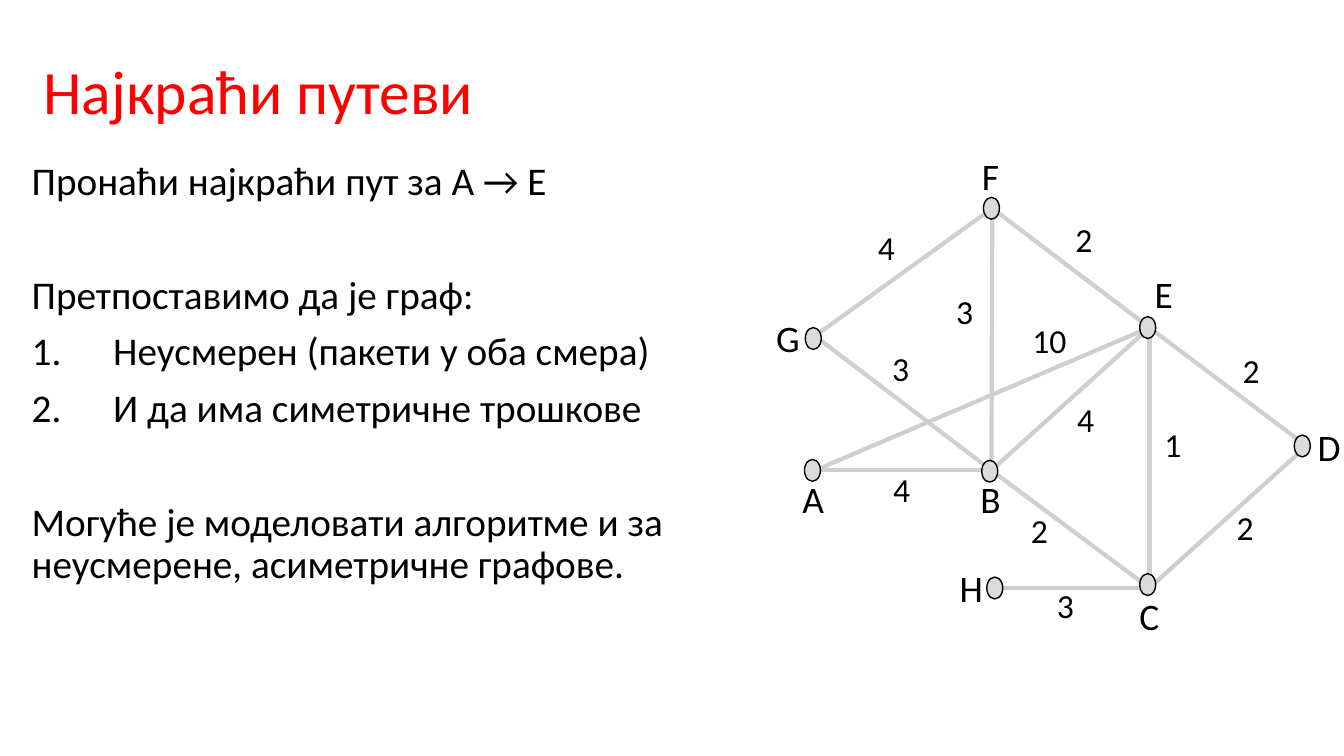
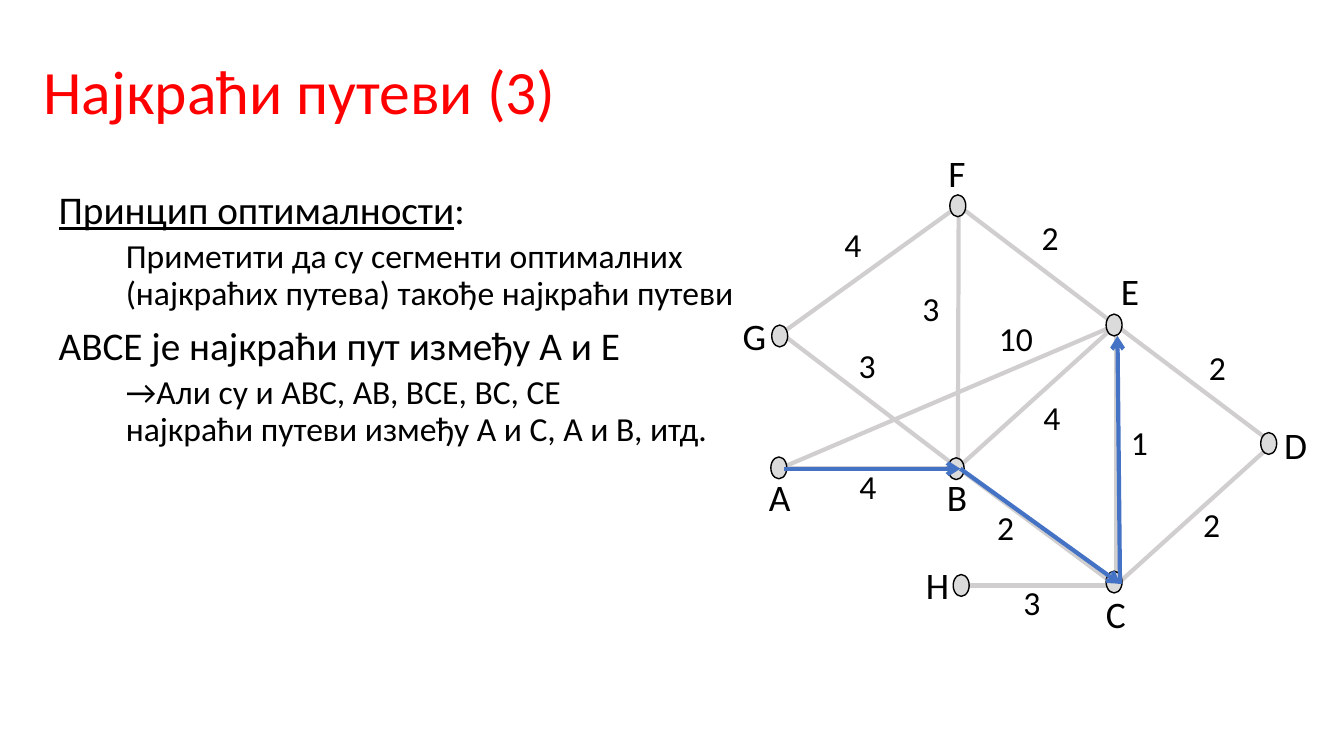
from lxml import etree
from pptx import Presentation
from pptx import util as u
from pptx.dml.color import RGBColor
from pptx.enum import shapes, text
from pptx.oxml.ns import qn

FONT = "Calibri"
BLACK, RED, EDGE, DOT, ROUTE = "000000", "FF0000", "D0CECE", "DBDBDB", "4472C4"

deck = Presentation()
deck.slide_width, deck.slide_height = u.Inches(13.33), u.Inches(7.5)
cell = deck.slide_height / 90  # square grid: 160 columns by 90 rows


def paint(target, colour):
    """Give a font, a fill or a line's fill one solid colour."""
    if hasattr(target, "solid"):
        target.solid()
        target.fore_color.rgb = RGBColor.from_string(colour)
    else:
        target.color.rgb = RGBColor.from_string(colour)


def write(slide, box, paragraphs, size=28, colour=BLACK, anchor="TOP", align="LEFT",
          wrap=True, inset=True, leading=0.9):
    """Each paragraph is a text and its own format, which overrides the shared one."""
    frame = slide.shapes.add_textbox(*[round(n * cell) for n in box]).text_frame
    frame.word_wrap = wrap
    frame.vertical_anchor = text.MSO_ANCHOR[anchor]
    if not inset:
        frame.margin_left = frame.margin_right = frame.margin_top = frame.margin_bottom = 0
    for i, (words, own) in enumerate(paragraphs):
        line = frame.add_paragraph() if i else frame.paragraphs[0]
        line.alignment = text.PP_ALIGN[align]
        line.line_spacing = leading
        line.space_before = u.Pt(own.get("before", 0))
        props = line._p.get_or_add_pPr()
        indent = round(own.get("indent", 0) * cell)
        props.set("marL", str(indent))
        if own.get("numbered"):
            props.set("indent", str(-indent))
            etree.SubElement(props, qn("a:buFont"), typeface="+mj-lt")
            etree.SubElement(props, qn("a:buAutoNum"), type="arabicPeriod")
        underlined = own.get("underlined", "")
        for part in filter(None, (underlined, words)):
            for row, piece in enumerate(part.split("\n")):
                if row:
                    line.add_line_break()
                run = line.add_run()
                run.text = piece
                run.font.name = FONT
                run.font.size = u.Pt(own.get("size", size))
                run.font.underline = part is underlined
                paint(run.font, colour)


# Node: where its edges meet, centre of its dot, centre of its letter
nodes = {
    "A": ((5.8, 38.4), (5.5, 38.4), (5.6, 41.8)),
    "B": ((26.8, 38.4), (26.6, 38.5), (26.7, 41.8)),
    "C": ((45.6, 52.4), (45.4, 52), (45.6, 55.7)),
    "D": ((64.3, 35.5), (63.8, 35.5), (67, 35.6)),
    "E": ((45.6, 21.4), (45.4, 21.4), (47.3, 17.3)),
    "F": ((26.9, 7.2), (26.8, 7.2), (26.7, 3.3)),
    "G": ((5.8, 22.4), (5.6, 22.7), (2.6, 22.6)),
    "H": ((26.8, 52.4), (27.2, 52.4), (24.4, 52.3)),
}
# Edge: its cost and the centre of the cost
edges = {
    "AB": ("4", (16.1, 40.6)), "BC": ("2", (32.5, 45.5)), "CE": ("1", (48.4, 35.3)),
    "BE": ("4", (38, 32.3)), "AE": ("10", (33.7, 22.9)), "BF": ("3", (23.6, 19.4)),
    "BG": ("3", (16, 26.2)), "GF": ("4", (14.3, 11.8)), "FE": ("2", (37.8, 10.9)),
    "ED": ("2", (57.7, 26.4)), "CD": ("2", (57, 45.1)), "CH": ("3", (35.6, 54.4)),
}
best_route = [(6.1, 38.5), (27.1, 38.5), (46.1, 52.2), (45.8, 22.7)]
dot_width, dot_height, label_side = 1.9, 2.6, 6

point = {"before": 10}
after_gap = {"before": 51}
step = {"before": 10, "indent": 9.7, "numbered": True}
detail = {"before": 5, "indent": 8, "size": 24}

lessons = [
    ("Најкраћи путеви", (2.6, 18.7, 101.3, 55.7), [
        ("Пронаћи најкраћи пут за A → E", point),
        ("Претпоставимо да је граф:", after_gap),
        ("Неусмерен (пакети у оба смера)", step),
        ("И да има симетричне трошкове", step),
        ("Могуће је моделовати алгоритме и за неусмерене, асиметричне графове.", after_gap),
    ], (91.2, 17.6), []),
    ("Најкраћи путеви (3)", (5.8, 22.1, 83.5, 60), [
        (":", {"before": 10, "underlined": "Принцип оптималности"}),
        ("Приметити да су сегменти оптималних (најкраћих путева) такође најкраћи путеви",
         detail),
        ("ABCE је најкраћи пут између А и E", point),
        ("→Али су и ABC, AB, BCE, BC, CE\nнајкраћи путеви између A и C, A и B, итд.", detail),
    ], (87.2, 17.3), best_route),
]

for title, body_box, body, (left, top), route in lessons:
    slide = deck.slides.add_slide(deck.slide_layouts[6])
    write(slide, (4, 3.7, 152, 15), [(title, {})], size=44, colour=RED, anchor="MIDDLE")
    write(slide, body_box, body)

    # Edges lie under the dots, the highlighted route over everything
    edge_lines = [(nodes[a][0], nodes[b][0], EDGE) for a, b in edges]
    route_lines = [(start, end, ROUTE) for start, end in zip(route, route[1:])]
    for layer in (edge_lines, route_lines):
        for (x1, y1), (x2, y2), colour in layer:
            link = slide.shapes.add_connector(
                shapes.MSO_CONNECTOR.STRAIGHT,
                *[round(n * cell) for n in (left + x1, top + y1, left + x2, top + y2)])
            link.line.width = u.Pt(3)
            paint(link.line.fill, colour)
            if colour == ROUTE:
                etree.SubElement(link.line._get_or_add_ln(), qn("a:tailEnd"), type="arrow")
            etree.SubElement(link._element.spPr, qn("a:effectLst"))
        if layer is route_lines:
            continue

        # Dots
        for _, (x, y), _ in nodes.values():
            dot = slide.shapes.add_shape(
                shapes.MSO_SHAPE.OVAL,
                *[round(n * cell) for n in (left + x - dot_width / 2, top + y - dot_height / 2,
                                            dot_width, dot_height)])
            dot.shadow.inherit = False
            paint(dot.fill, DOT)
            paint(dot.line.fill, BLACK)
            dot.line.width = u.Pt(1)

        # Node letters and edge costs
        letters = [(name, place[2], 26.7) for name, place in nodes.items()]
        costs = [(cost, centre, 24) for cost, centre in edges.values()]
        for label, (x, y), size in letters + costs:
            box = (left + x - label_side / 2, top + y - label_side / 2, label_side, label_side)
            write(slide, box, [(label, {})], size=size, anchor="MIDDLE", align="CENTER",
                  wrap=False, inset=False, leading=1.0)

deck.save("out.pptx")
